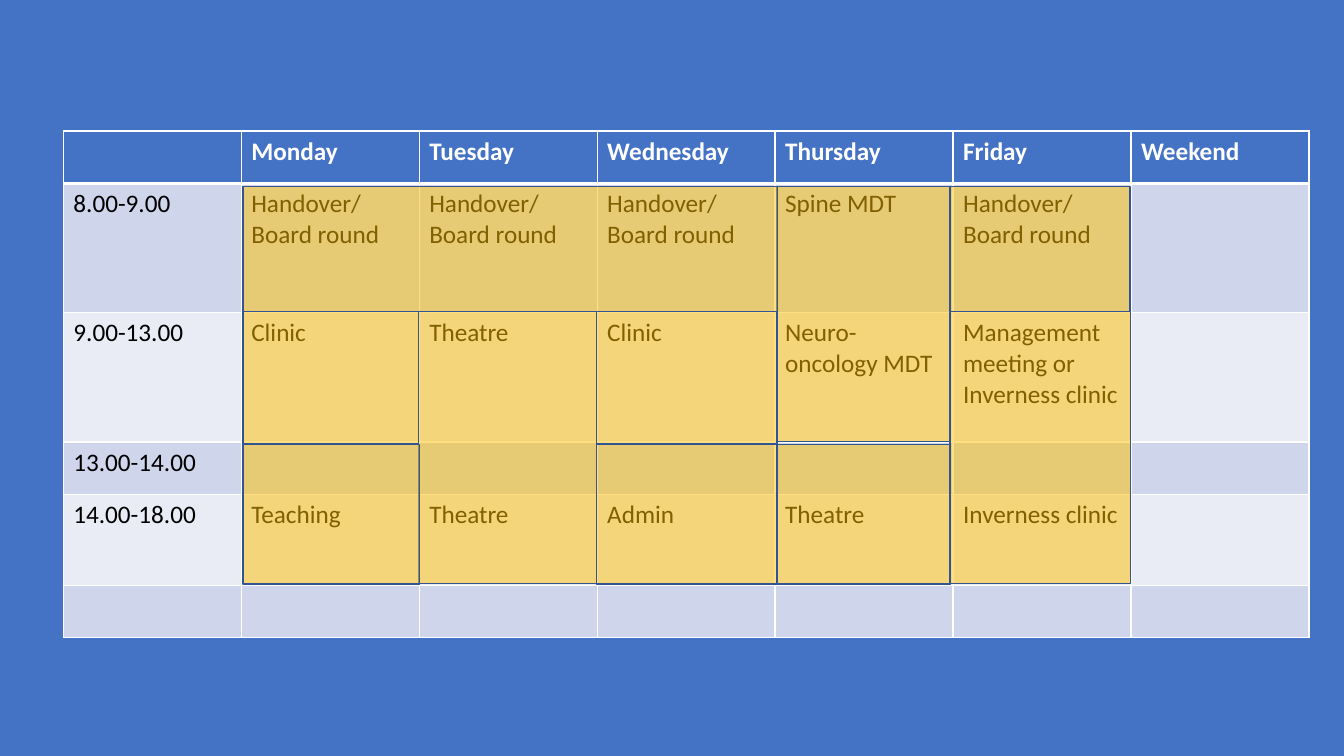
from dataclasses import dataclass

from lxml import etree
from pptx import Presentation
from pptx.dml.color import RGBColor
from pptx.enum import shapes
from pptx.oxml import ns
from pptx.util import Pt

BLUE = RGBColor(0x44, 0x72, 0xC4)
NAVY = RGBColor(0x32, 0x54, 0x91)
GOLD = RGBColor(0xFF, 0xC0, 0x00)
WHITE = RGBColor(0xFF, 0xFF, 0xFF)
BLACK = RGBColor(0x00, 0x00, 0x00)
DARK = RGBColor(0xCF, 0xD5, 0xEA)
PALE = RGBColor(0xE9, 0xEB, 0xF5)

FONT = "Calibri"
LEFT, TOP, WIDTH = 45.2, 93.6, 127.13
ROUND = "Handover/\nBoard round"


@dataclass
class Row:
    height: float
    texts: tuple[str, ...]


@dataclass
class Patch:
    left: float
    top: float
    width: float
    height: float


ROWS = [
    Row(37.4, ("", "Monday", "Tuesday", "Wednesday", "Thursday", "Friday", "Weekend")),
    Row(92.4, ("8.00-9.00", ROUND, ROUND, ROUND, "Spine MDT", ROUND, "")),
    Row(92.4, ("9.00-13.00", "Clinic", "Theatre", "Clinic", "Neuro-oncology MDT",
               "Management meeting or Inverness clinic", "")),
    Row(37.4, ("13.00-14.00", "", "", "", "", "", "")),
    Row(65, ("14.00-18.00", "Teaching", "Theatre", "Admin", "Theatre", "Inverness clinic", "")),
    Row(37.4, ("",) * 7),
]

MON, TUE, WED, THU, FRI = 173.5, 298.8, 426.2, 555.1, 678.6
EARLY, MID, LATE = 133.2, 222.5, 317.5
PATCHES = [
    Patch(THU, EARLY, 123.1, 182.2),
    Patch(MON, EARLY, 382, 89.3),
    Patch(FRI, EARLY, 128.5, 89.3),
    Patch(TUE, MID, 127.4, 194.4),
    Patch(THU, LATE, 123.8, 99.7),
    Patch(MON, MID, 125.3, 94.6),
    Patch(WED, MID, 128.9, 94.6),
    Patch(FRI, MID, 128.9, 194.4),
    Patch(MON, LATE, 126, 99.7),
    Patch(WED, LATE, 128.9, 99.7),
]


def add_edge(cell, side: str, weight: float) -> None:
    props = cell._tc.get_or_add_tcPr()
    line = etree.SubElement(props, ns.qn(f"a:ln{side}"), w=str(Pt(weight)))
    fill = etree.SubElement(line, ns.qn("a:solidFill"))
    etree.SubElement(fill, ns.qn("a:srgbClr"), val=str(WHITE))


def fill_cell(cell, words: str, index: int) -> None:
    head = index == 0
    for side in "LRTB":
        thick = (head and side == "B") or (index == 1 and side == "T")
        add_edge(cell, side, 3 if thick else 1)
    cell.fill.solid()
    cell.fill.fore_color.rgb = BLUE if head else DARK if index % 2 else PALE
    cell.text = words
    for para in cell.text_frame.paragraphs:
        para.font.name = FONT
        para.font.size = Pt(18)
        para.font.bold = head
        para.font.color.rgb = WHITE if head else BLACK


def add_week(slide) -> None:
    count = len(ROWS[0].texts)
    tall = sum(row.height for row in ROWS)
    table = slide.shapes.add_table(
        len(ROWS), count, Pt(LEFT), Pt(TOP), Pt(WIDTH * count), Pt(tall)).table
    for column in table.columns:
        column.width = Pt(WIDTH)
    for index, row in enumerate(ROWS):
        table.rows[index].height = Pt(row.height)
        for place, words in enumerate(row.texts):
            fill_cell(table.cell(index, place), words, index)


def add_patch(slide, patch: Patch) -> None:
    box = slide.shapes.add_shape(
        shapes.MSO_SHAPE.RECTANGLE, Pt(patch.left), Pt(patch.top),
        Pt(patch.width), Pt(patch.height))
    box.shadow.inherit = False
    box.fill.solid()
    box.fill.fore_color.rgb = GOLD
    shade = box._element.spPr.find(ns.qn("a:solidFill"))[0]
    etree.SubElement(shade, ns.qn("a:alpha"), val="50000")
    box.line.color.rgb = NAVY
    box.line.width = Pt(1)


def main() -> None:
    deck = Presentation()
    deck.slide_width, deck.slide_height = Pt(960), Pt(540)
    slide = deck.slides.add_slide(deck.slide_layouts.get_by_name("Blank"))
    slide.background.fill.solid()
    slide.background.fill.fore_color.rgb = BLUE
    add_week(slide)
    for patch in PATCHES:
        add_patch(slide, patch)
    deck.save("out.pptx")


if __name__ == "__main__":
    main()
